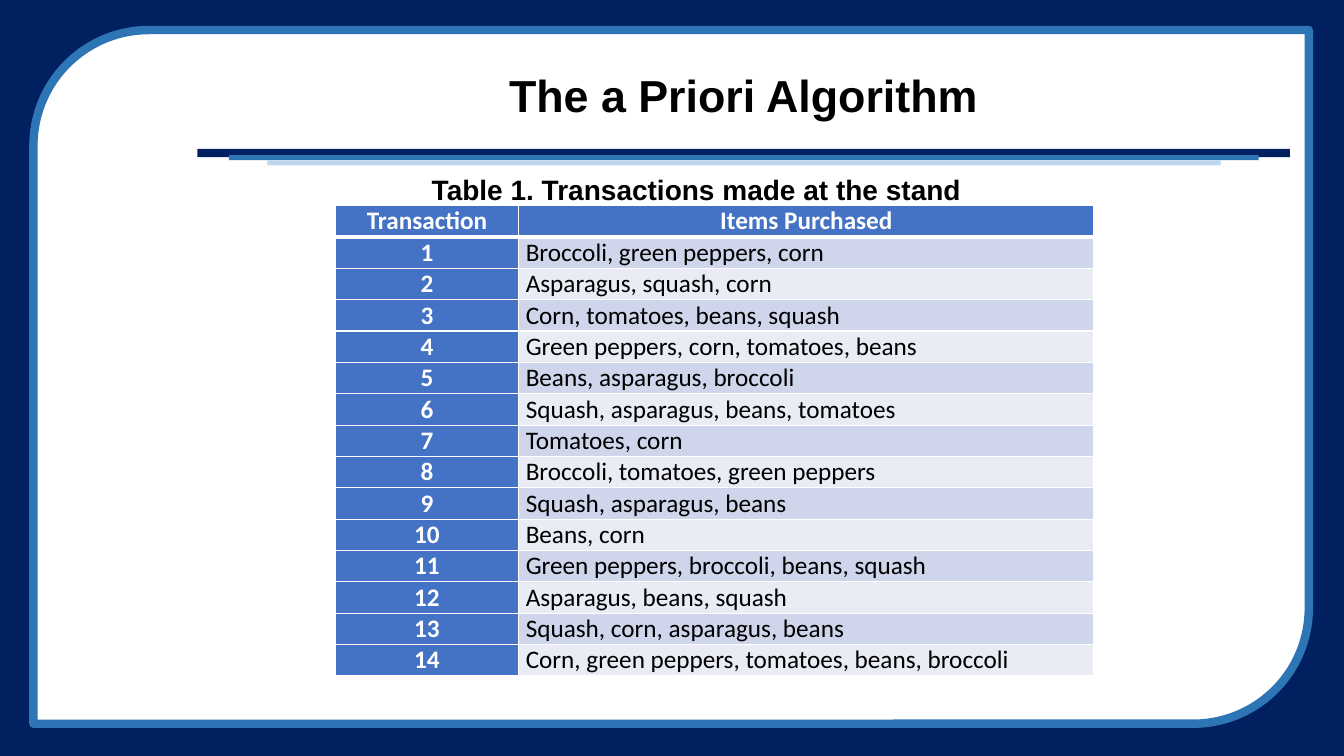
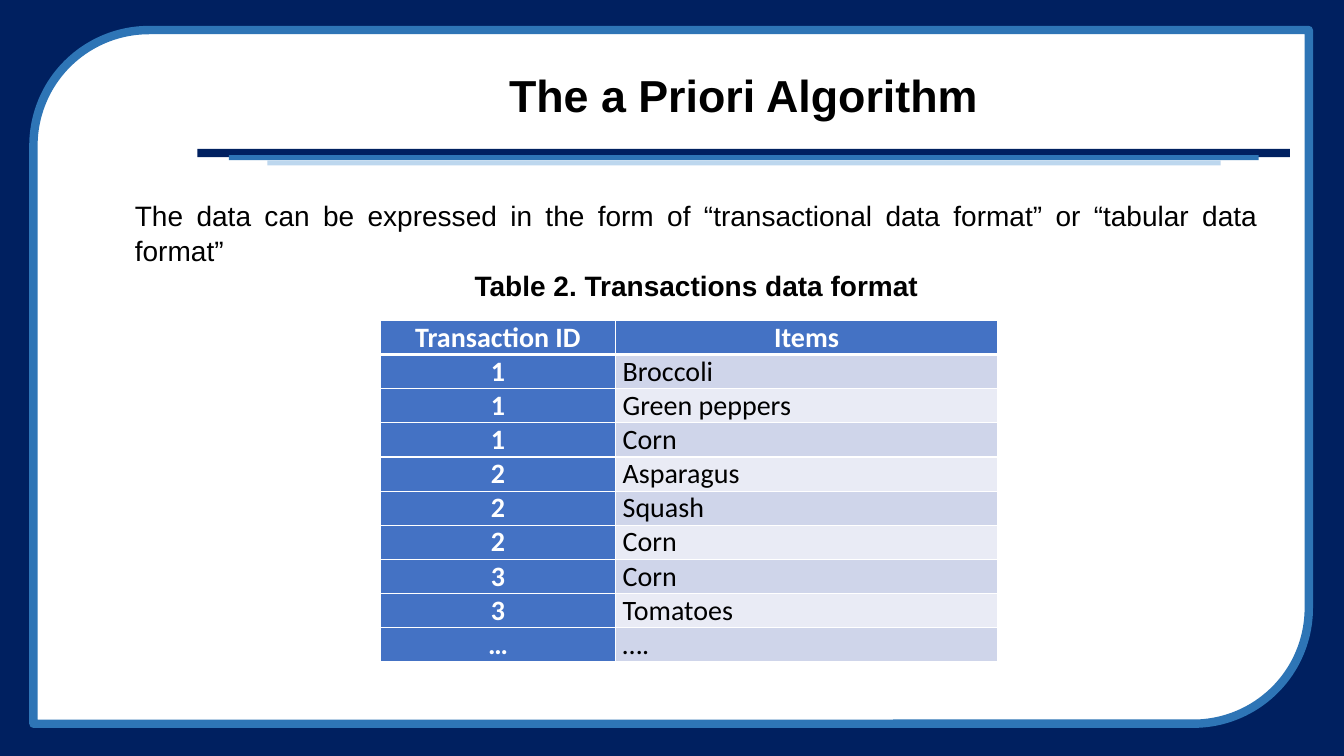
from dataclasses import dataclass
from itertools import zip_longest

from lxml.etree import SubElement
from pptx import Presentation
from pptx.dml.color import RGBColor
from pptx.enum.shapes import MSO_SHAPE
from pptx.enum.text import MSO_ANCHOR, MSO_AUTO_SIZE, PP_ALIGN
from pptx.oxml.ns import qn
from pptx.util import Pt


@dataclass(frozen=True)
class Theme:
    """Colours, fonts and type sizes of the deck."""
    navy: str = "002060"
    blue: str = "2E75B6"
    pale: str = "BDD7EE"
    white: str = "FFFFFF"
    black: str = "000000"
    header: str = "4472C4"
    bands: tuple[str, str] = ("CFD5EA", "E9EBF5")
    text_font: str = "Arial"
    table_font: str = "Calibri"
    title_size: float = 32
    body_size: float = 20


@dataclass(frozen=True)
class Box:
    """A position and size in points."""
    left: float
    top: float
    width: float
    height: float

    def lengths(self):
        """Return the four values as lengths."""
        return Pt(self.left), Pt(self.top), Pt(self.width), Pt(self.height)


@dataclass(frozen=True)
class Panel:
    """A filled shape of the shared backdrop."""
    box: Box
    fill: str
    shape: MSO_SHAPE = MSO_SHAPE.RECTANGLE
    outline: str | None = None


@dataclass(frozen=True)
class Paragraph:
    """A body paragraph with its format."""
    text: str
    align: PP_ALIGN = PP_ALIGN.CENTER
    bold: bool = True


@dataclass(frozen=True)
class TableSlide:
    """The content of one slide."""
    body: Box
    line_spacing: float
    paragraphs: tuple[Paragraph, ...]
    table_left: float
    table_top: float
    columns: tuple[float, float]
    row_height: float
    cell_size: float
    rows: tuple[tuple[str, str], ...]


THEME = Theme()
SLIDE = Box(0, 0, 960, 540)
TITLE = Box(141, 35.3, 780.5, 69.8)
OUTLINE_WIDTH = 6
GRID_WIDTH, HEADER_RULE = 1, 3
CELL_INSET = 5.1
BACKDROP = (
    Panel(SLIDE, THEME.navy),
    Panel(Box(23.9, 21.5, 911, 495.5), THEME.white,
          MSO_SHAPE.ROUND_2_DIAG_RECTANGLE, THEME.blue),
    Panel(Box(141, 106.4, 780.5, 5.8), THEME.navy),
    Panel(Box(163.5, 110.9, 735.5, 3.5), THEME.blue),
    Panel(Box(191, 114.5, 681, 3.6), THEME.pale),
)

PURCHASES = (
    "Broccoli, green peppers, corn",
    "Asparagus, squash, corn",
    "Corn, tomatoes, beans, squash",
    "Green peppers, corn, tomatoes, beans",
    "Beans, asparagus, broccoli",
    "Squash, asparagus, beans, tomatoes",
    "Tomatoes, corn",
    "Broccoli, tomatoes, green peppers",
    "Squash, asparagus, beans",
    "Beans, corn",
    "Green peppers, broccoli, beans, squash",
    "Asparagus, beans, squash",
    "Squash, corn, asparagus, beans",
    "Corn, green peppers, tomatoes, beans, broccoli",
)

SLIDES = (
    TableSlide(
        Box(89.3, 117.4, 816.5, 358.6), 1.1,
        (Paragraph("Table 1. Transactions made at the stand"),),
        239.5, 146.9, (131, 411), 22.4, 18,
        (("Transaction", "Items Purchased"),
         *((str(number), items) for number, items in enumerate(PURCHASES, 1))),
    ),
    TableSlide(
        Box(89.3, 136.8, 816.5, 339.2), 1.05,
        (Paragraph("The data can be expressed in the form of “transactional data "
                   "format” or “tabular data format”", PP_ALIGN.JUSTIFY, False),
         Paragraph("Table 2. Transactions data format")),
        271.7, 228.9, (168, 273), 24.4, 20,
        (("Transaction ID", "Items"),
         ("1", "Broccoli"), ("1", "Green peppers"), ("1", "Corn"),
         ("2", "Asparagus"), ("2", "Squash"), ("2", "Corn"),
         ("3", "Corn"), ("3", "Tomatoes"), ("…", "….")),
    ),
)


def write(paragraph, text: str, *, size: float, font: str = THEME.text_font,
          color: str = THEME.black, bold: bool = False,
          align: PP_ALIGN = PP_ALIGN.CENTER, spacing: float = 1.0) -> None:
    """Put formatted text in a paragraph."""
    paragraph.alignment = align
    paragraph.line_spacing = spacing
    run = paragraph.add_run()
    run.text = text
    run.font.name = font
    run.font.size = Pt(size)
    run.font.bold = bold
    run.font.color.rgb = RGBColor.from_string(color)


def draw_panel(slide, panel: Panel):
    """Draw one backdrop shape and return it."""
    shape = slide.shapes.add_shape(panel.shape, *panel.box.lengths())
    shape.shadow.inherit = False
    shape.fill.solid()
    shape.fill.fore_color.rgb = RGBColor.from_string(panel.fill)
    if panel.outline:
        shape.line.color.rgb = RGBColor.from_string(panel.outline)
        shape.line.width = Pt(OUTLINE_WIDTH)
    else:
        shape.line.fill.background()
    return shape


def share_backdrop(slide) -> None:
    """Draw the backdrop and move it to the layout, behind its placeholders."""
    layout_tree = slide.slide_layout.shapes.element
    for position, panel in enumerate(BACKDROP, 2):
        layout_tree.insert(position, draw_panel(slide, panel).element)


def add_title(slide, text: str) -> None:
    """Place and format the title placeholder."""
    title = slide.shapes.title
    title.left, title.top, title.width, title.height = TITLE.lengths()
    frame = title.text_frame
    frame.auto_size = MSO_AUTO_SIZE.NONE
    frame.vertical_anchor = MSO_ANCHOR.MIDDLE
    write(frame.paragraphs[0], text, size=THEME.title_size, bold=True, spacing=0.9)


def add_body(slide, content: TableSlide) -> None:
    """Add the text above the table."""
    frame = slide.shapes.add_textbox(*content.body.lengths()).text_frame
    frame.word_wrap = True
    for existing, item in zip_longest(frame.paragraphs, content.paragraphs):
        write(existing or frame.add_paragraph(), item.text, size=THEME.body_size,
              bold=item.bold, align=item.align, spacing=content.line_spacing)


def set_borders(cell, top: float, bottom: float) -> None:
    """Give a cell white borders."""
    properties = cell._tc.get_or_add_tcPr()
    widths = {"a:lnL": GRID_WIDTH, "a:lnR": GRID_WIDTH, "a:lnT": top, "a:lnB": bottom}
    for tag, width in widths.items():
        border = SubElement(properties, qn(tag), w=str(Pt(width)))
        fill = SubElement(border, qn("a:solidFill"))
        SubElement(fill, qn("a:srgbClr"), val=THEME.white)


def format_cell(cell, text: str, row: int, column: int, size: float) -> None:
    """Fill, border and write one table cell."""
    heading = row == 0 or column == 0
    set_borders(cell, HEADER_RULE if row == 1 else GRID_WIDTH,
                HEADER_RULE if row == 0 else GRID_WIDTH)
    cell.fill.solid()
    cell.fill.fore_color.rgb = RGBColor.from_string(
        THEME.header if heading else THEME.bands[(row - 1) % 2])
    cell.margin_left = cell.margin_right = Pt(CELL_INSET)
    cell.margin_top = cell.margin_bottom = Pt(0)
    cell.vertical_anchor = MSO_ANCHOR.MIDDLE
    write(cell.text_frame.paragraphs[0], text, size=size, font=THEME.table_font,
          color=THEME.white if heading else THEME.black, bold=heading,
          align=PP_ALIGN.CENTER if heading else PP_ALIGN.LEFT)


def add_transactions(slide, content: TableSlide) -> None:
    """Add the table of transactions."""
    box = Box(content.table_left, content.table_top, sum(content.columns),
              content.row_height * len(content.rows))
    table = slide.shapes.add_table(
        len(content.rows), len(content.columns), *box.lengths()).table
    table.first_col = True
    for column, width in zip(table.columns, content.columns):
        column.width = Pt(width)
    for row, values in enumerate(content.rows):
        table.rows[row].height = Pt(content.row_height)
        for column, text in enumerate(values):
            format_cell(table.cell(row, column), text, row, column, content.cell_size)


def main() -> None:
    """Build and save the deck."""
    deck = Presentation()
    deck.slide_width, deck.slide_height = Pt(SLIDE.width), Pt(SLIDE.height)
    title_only = deck.slide_layouts[5]
    for number, content in enumerate(SLIDES):
        slide = deck.slides.add_slide(title_only)
        if number == 0:
            share_backdrop(slide)
        add_title(slide, "The a Priori Algorithm")
        add_body(slide, content)
        add_transactions(slide, content)
    deck.save("out.pptx")


if __name__ == "__main__":
    main()
